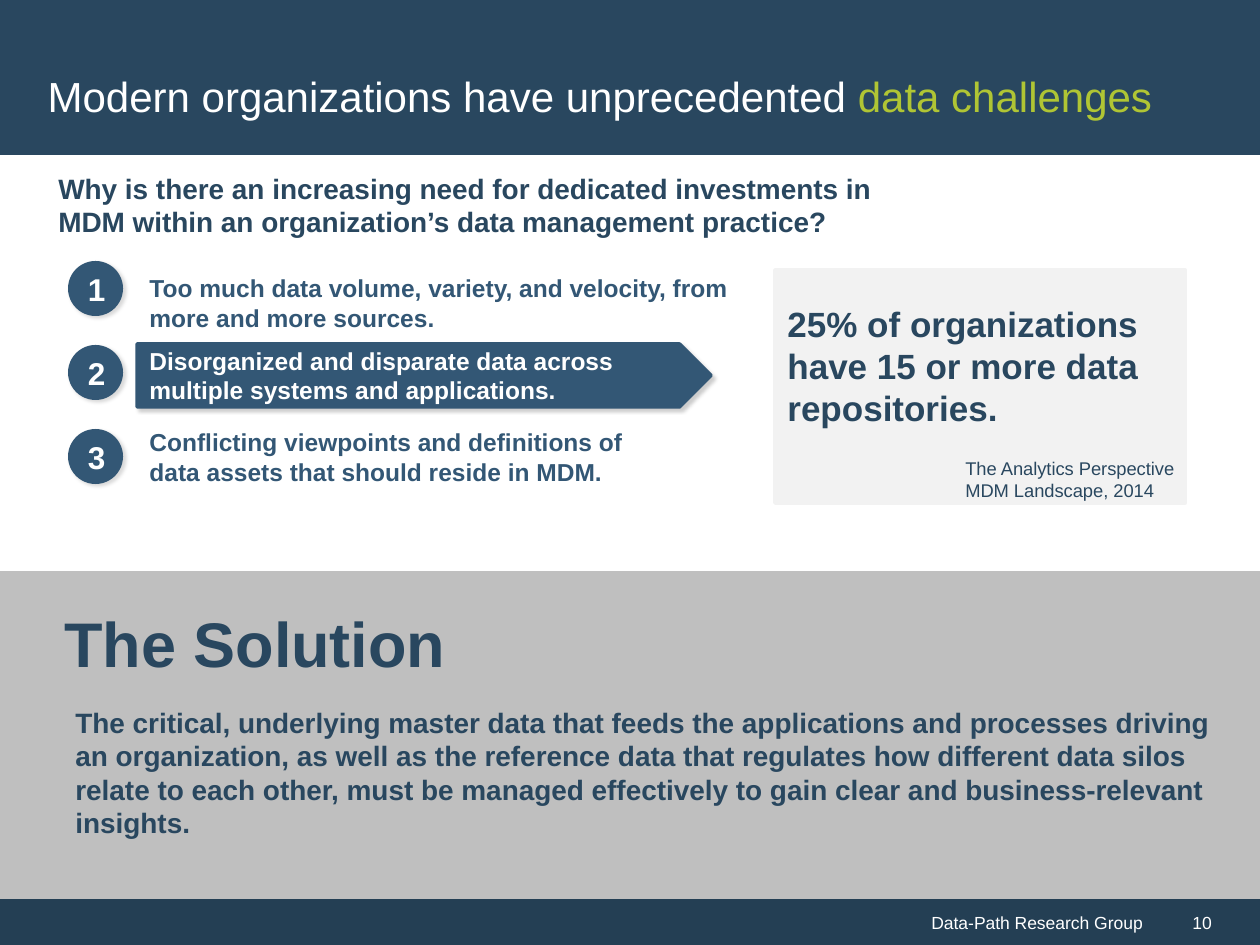
from lxml.etree import SubElement
from pptx import Presentation
from pptx.dml.color import RGBColor
from pptx.enum.shapes import MSO_SHAPE
from pptx.enum.text import MSO_ANCHOR, MSO_AUTO_SIZE, PP_ALIGN
from pptx.oxml.ns import qn
from pptx.util import Emu, Inches, Pt

PX = 914400 / 126
NAVY = RGBColor(0x29, 0x47, 0x5F)
DARK = RGBColor(0x24, 0x3F, 0x54)
BLUE = RGBColor(0x33, 0x57, 0x75)
LIGHT = RGBColor(0xF2, 0xF2, 0xF2)
GREY = RGBColor(0xBF, 0xBF, 0xBF)
GREEN = RGBColor(0xB0, 0xC5, 0x34)
WHITE = RGBColor(0xFF, 0xFF, 0xFF)


def px(n):
    return Emu(round(n * PX))


def style(p, size, color, bold=False, align=PP_ALIGN.LEFT, indent=0):
    p.font.name = "Arial"
    p.font.size = Pt(size)
    p.font.bold = bold
    p.font.color.rgb = color
    p.alignment = align
    if indent:
        p._p.get_or_add_pPr().set("marL", str(px(indent)))


def add_shadow(s, opacity):
    effects = s._element.spPr.find(qn("a:effectLst"))
    shadow = SubElement(effects, qn("a:outerShdw"), blurRad=str(Pt(2)),
                        dist=str(Pt(2)), dir="2700000", algn="tl", rotWithShape="0")
    color = SubElement(shadow, qn("a:srgbClr"), val="000000")
    SubElement(color, qn("a:alpha"), val=str(opacity * 1000))


def add_block(slide, kind, box, fill, outlined=False, shadow=0):
    s = slide.shapes.add_shape(kind, *map(px, box))
    s.shadow.inherit = False
    s.fill.solid()
    s.fill.fore_color.rgb = fill
    if outlined:
        s.line.color.rgb = fill
        s.line.width = Pt(2)
    else:
        s.line.fill.background()
    if shadow:
        add_shadow(s, shadow)
    return s


def set_text(s, text, size, color, **options):
    p = s.text_frame.paragraphs[0]
    p.text = text
    style(p, size, color, **options)


def add_label(slide, box, text, size, color, bold=True):
    s = slide.shapes.add_textbox(*map(px, box))
    s.text_frame.word_wrap = True
    set_text(s, text, size, color, bold=bold)


def add_number(slide, number, top):
    s = add_block(slide, MSO_SHAPE.OVAL, (68, top, 55, 55), BLUE, shadow=15)
    tf = s.text_frame
    tf.margin_left, tf.margin_right = px(2), 0
    tf.margin_top = tf.margin_bottom = 0
    set_text(s, str(number), 18, WHITE, bold=True, align=PP_ALIGN.CENTER)


def add_footer(slide):
    s = add_block(slide, MSO_SHAPE.RECTANGLE, (0, 899, 1155, 46), DARK)
    set_text(s, "Data-Path Research Group", 10, WHITE, align=PP_ALIGN.RIGHT)
    s = add_block(slide, MSO_SHAPE.RECTANGLE, (1155, 899, 105, 46), DARK)
    set_text(s, "10", 10, WHITE, indent=25)


def add_title(slide):
    add_block(slide, MSO_SHAPE.RECTANGLE, (0, 0, 1260, 155), NAVY)
    title = slide.shapes.title
    title.left, title.top, title.width, title.height = map(px, (35, 35, 1188, 121))
    tf = title.text_frame
    tf.auto_size = MSO_AUTO_SIZE.NONE
    tf.vertical_anchor = MSO_ANCHOR.MIDDLE
    p = tf.paragraphs[0]
    p.add_run().text = "Modern organizations have unprecedented "
    r = p.add_run()
    r.text = "data challenges"
    style(p, 24, WHITE)
    r.font.color.rgb = GREEN
    # Bring the title in front of its band
    slide.shapes._spTree.append(title._element)


def add_statistic(slide):
    s = add_block(slide, MSO_SHAPE.RECTANGLE, (775, 270, 410, 233), LIGHT, outlined=True)
    s.text_frame.margin_bottom = px(48)
    set_text(s, "25% of organizations have 15 or more data repositories.",
             20, NAVY, bold=True)
    add_label(slide, (953, 451, 261, 57),
              "The Analytics Perspective MDM Landscape, 2014", 10.5, NAVY, bold=False)


def add_solution(slide):
    s = add_block(slide, MSO_SHAPE.RECTANGLE, (0, 573, 1260, 324), GREY, outlined=True)
    tf = s.text_frame
    tf.vertical_anchor = MSO_ANCHOR.TOP
    tf.margin_top = px(32)
    set_text(s, "The Solution", 36, NAVY, bold=True, indent=52)
    p = tf.add_paragraph()
    p.text = ("The critical, underlying master data that feeds the applications and "
              "processes driving an organization, as well as the reference data that "
              "regulates how different data silos relate to each other, must be managed "
              "effectively to gain clear and business-relevant insights.")
    p.space_before = Pt(14)
    style(p, 16, NAVY, bold=True, indent=63)


def add_challenges(slide):
    add_label(slide, (46, 165, 857, 81),
              "Why is there an increasing need for dedicated investments in MDM "
              "within an organization’s data management practice?", 16, NAVY)
    for i in range(3):
        add_number(slide, i + 1, 261 + 84 * i)
    add_label(slide, (137, 267, 609, 72),
              "Too much data volume, variety, and velocity, from more and more sources.",
              14, BLUE)
    arrow = add_block(slide, MSO_SHAPE.PENTAGON, (137, 344, 574, 63), BLUE,
                      outlined=True, shadow=20)
    arrow.text_frame.margin_top = arrow.text_frame.margin_bottom = 0
    set_text(arrow, "Disorganized and disparate data across multiple systems and applications.",
             14, WHITE, bold=True)
    add_label(slide, (137, 421, 523, 72),
              "Conflicting viewpoints and definitions of data assets that should reside in MDM.",
              14, BLUE)


def main():
    prs = Presentation()
    prs.slide_width, prs.slide_height = Inches(10), Inches(7.5)
    slide = prs.slides.add_slide(prs.slide_layouts[5])
    add_footer(slide)
    add_solution(slide)
    add_challenges(slide)
    add_statistic(slide)
    add_title(slide)
    prs.save("out.pptx")


if __name__ == "__main__":
    main()
